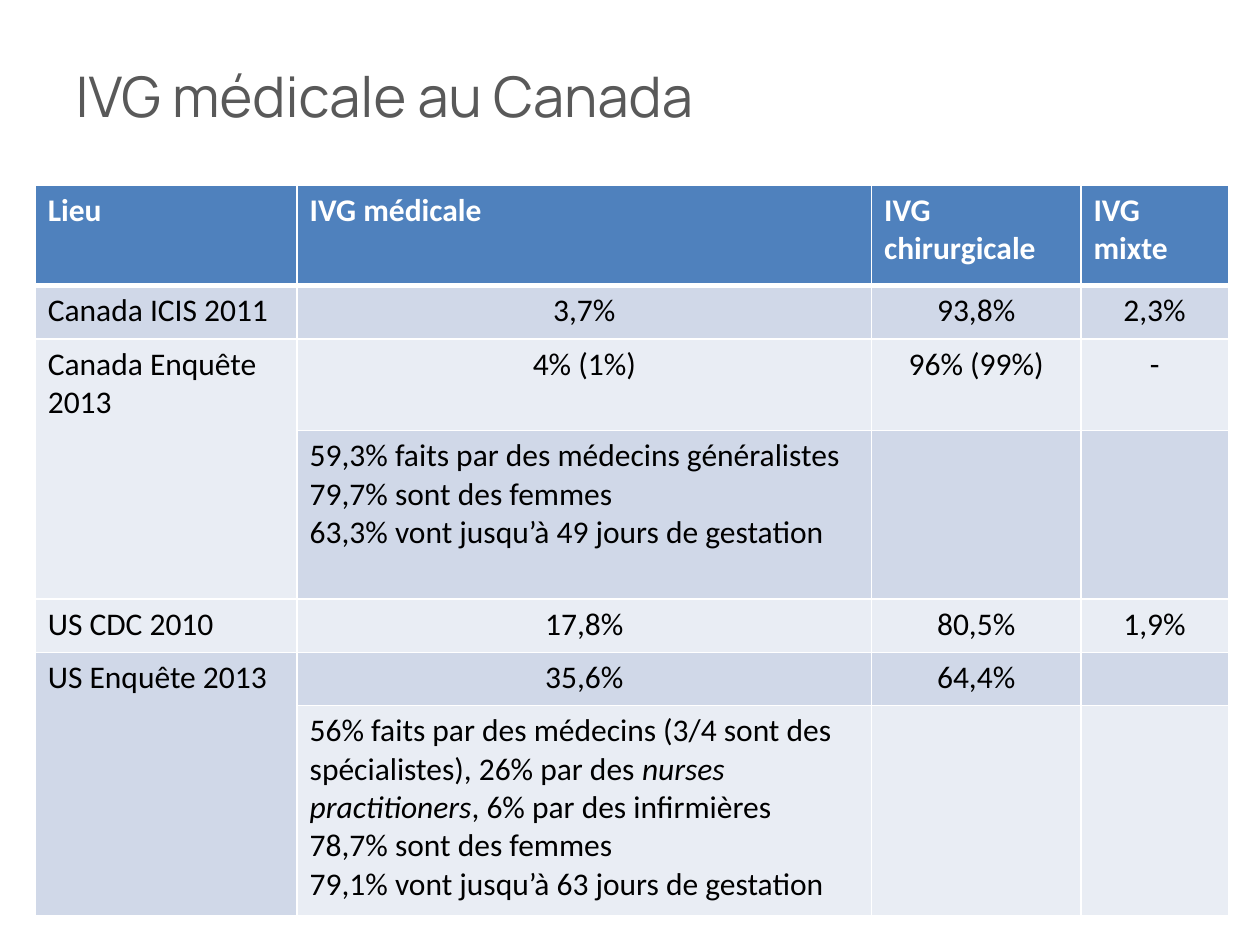
from lxml.etree import SubElement
from pptx import Presentation
from pptx.dml.color import RGBColor
from pptx.enum.text import MSO_ANCHOR, PP_ALIGN
from pptx.oxml import parse_xml
from pptx.oxml.ns import nsdecls
from pptx.util import Cm, Pt

WHITE = "FFFFFF"
HEADER_BLUE = "4F81BD"
BANDS = ["E9EDF4", "D0D8E8"]
ITALIC_MARK = "*"


def format_font(font, color, **values):
    font.color.rgb = RGBColor.from_string(color)
    for name, value in values.items():
        setattr(font, name, value)


def add_borders(cell, bottom_width):
    """Draw white lines on all four sides, ahead of the fill as the schema asks."""
    properties = cell._tc.get_or_add_tcPr()
    for index, side in enumerate("LRTB"):
        width = Pt(bottom_width if side == "B" else 1)
        line = parse_xml(f'<a:ln{side} {nsdecls("a")} w="{width}"><a:solidFill>'
                         f'<a:srgbClr val="{WHITE}"/></a:solidFill></a:ln{side}>')
        properties.insert(index, line)


presentation = Presentation()
presentation.slide_width, presentation.slide_height = Cm(25.4), Cm(19.05)
slide = presentation.slides.add_slide(presentation.slide_layouts[5])

heading = slide.shapes.title
placement = {"left": Cm(1.27), "top": Cm(0.33), "width": Cm(22.86), "height": Cm(3.18)}
for name, value in placement.items():
    setattr(heading, name, value)
heading.text_frame.text = "IVG médicale au Canada"
heading.text_frame.vertical_anchor = MSO_ANCHOR.MIDDLE
heading_line = heading.text_frame.paragraphs[0]
heading_line.alignment = PP_ALIGN.LEFT
format_font(heading_line.runs[0].font, "595959", name="Manrope", size=Pt(32))

# Asterisks enclose the words in italics.
abortion_rates = [
    ["Lieu", "IVG médicale", "IVG chirurgicale", "IVG mixte"],
    ["Canada ICIS 2011", "3,7%", "93,8%", "2,3%"],
    ["Canada Enquête 2013", "4% (1%)", "96% (99%)", "-"],
    ["", "59,3% faits par des médecins généralistes\n79,7% sont des femmes\n"
         "63,3% vont jusqu’à 49 jours de gestation", "", ""],
    ["US CDC 2010", "17,8%", "80,5%", "1,9%"],
    ["US Enquête 2013", "35,6%", "64,4%", ""],
    ["", "56% faits par des médecins (3/4 sont des spécialistes), 26% par des "
         "*nurses practitioners*, 6% par des infirmières\n78,7% sont des femmes\n"
         "79,1% vont jusqu’à 63 jours de gestation", "", ""],
]
column_widths = [5.28, 11.58, 4.22, 2.97]
row_heights = [2.03, 1.07, 1.85, 3.4, 1.07, 1.07, 4.24]

rates = slide.shapes.add_table(
    len(row_heights), len(column_widths), Cm(0.71), Cm(3.73),
    Cm(sum(column_widths)), Cm(sum(row_heights))).table
for column, width in zip(rates.columns, column_widths):
    column.width = Cm(width)
for row, height in zip(rates.rows, row_heights):
    row.height = Cm(height)

for row_index, row_texts in enumerate(abortion_rates):
    is_header = row_index == 0
    fill_color = HEADER_BLUE if is_header else BANDS[row_index % 2]
    text_color = WHITE if is_header else "000000"
    for column_index, text in enumerate(row_texts):
        cell = rates.cell(row_index, column_index)
        cell.fill.solid()
        cell.fill.fore_color.rgb = RGBColor.from_string(fill_color)
        add_borders(cell, 3 if is_header else 1)
        if not text:
            continue
        is_figure = not is_header and column_index > 0 and "\n" not in text
        for line_index, line in enumerate(text.split("\n")):
            frame = cell.text_frame
            paragraph = frame.add_paragraph() if line_index else frame.paragraphs[0]
            paragraph.alignment = PP_ALIGN.CENTER if is_figure else PP_ALIGN.LEFT
            for part_index, part in enumerate(line.split(ITALIC_MARK)):
                run = paragraph.add_run()
                run.text = part
                format_font(run.font, text_color, name="Calibri", size=Pt(18),
                            bold=is_header, italic=part_index % 2 == 1)

for survey_row in (2, 5):
    rates.cell(survey_row, 0).merge(rates.cell(survey_row + 1, 0))

presentation.save("out.pptx")
